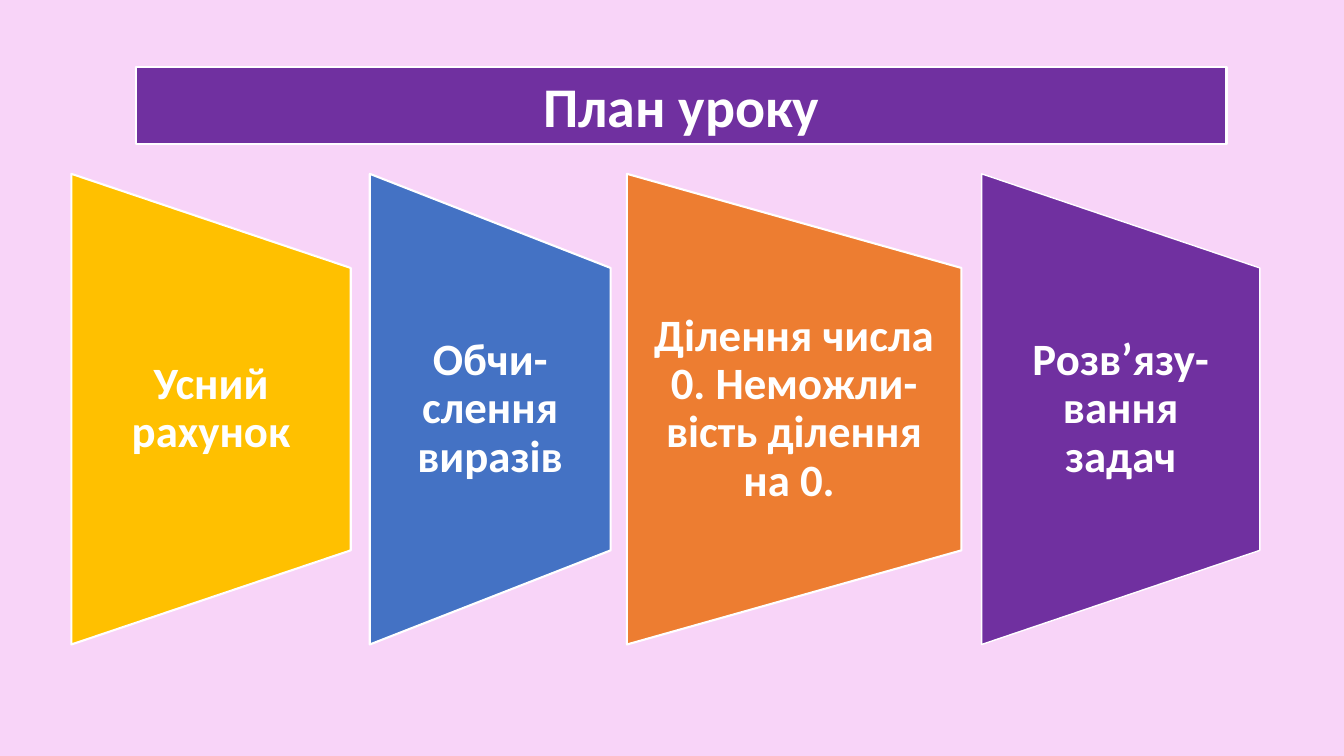
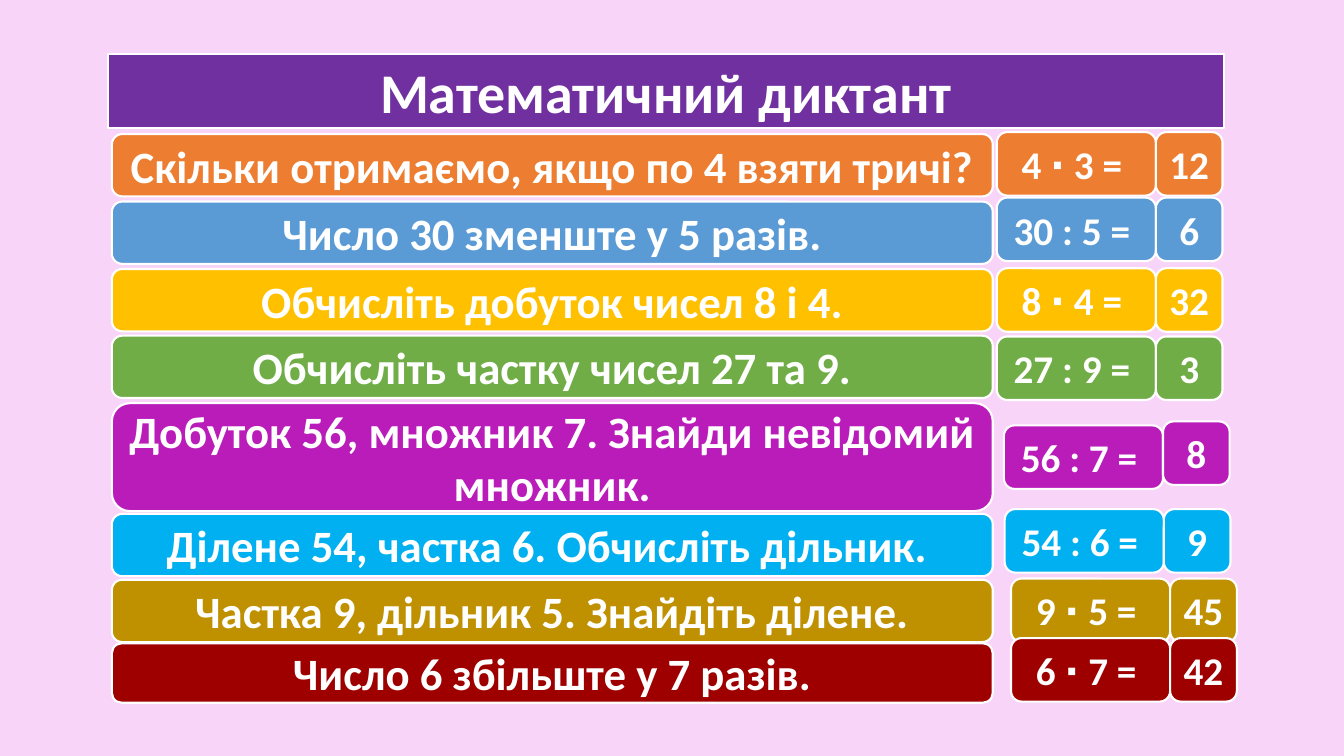
"""Build two lesson slides: the lesson plan and a maths dictation."""
from dataclasses import dataclass
from typing import Optional

import pptx
import pptx.dml.color
import pptx.enum.shapes
import pptx.enum.text
import pptx.shapes.base
import pptx.slide
import pptx.util

Cm = pptx.util.Cm
Pt = pptx.util.Pt
PRESETS = pptx.enum.shapes.MSO_SHAPE

FONT = "Calibri"
WHITE = "FFFFFF"
PINK = "F8D4F8"
PURPLE = "7030A0"
ORANGE = "ED7D31"
YELLOW = "FFC000"

TITLE_SIZE = 40
QUESTION_SIZE = 32
ANSWER_SIZE = 28
TITLE_ONLY_LAYOUT = 5

PANEL_MIDDLE = 10.31
PANEL_HEIGHT = 11.86
PANEL_TEXT_HEIGHT = 7.11
PANEL_INSET = 0.56

QUESTION_LEFT = 2.82
QUESTION_WIDTH = 22.2
EXPRESSION_WIDTH = 4.01
RESULT_WIDTH = 1.68
ANSWER_HEIGHT = 1.6


@dataclass(frozen=True)
class Box:
    """A rectangle in centimetres."""

    left: float
    top: float
    width: float
    height: float


@dataclass(frozen=True)
class Panel:
    """One step of the lesson plan."""

    text: str
    colour: str
    left: float
    width: float
    line_width: float = 1.5


@dataclass(frozen=True)
class Task:
    """One dictation question with its expression and result."""

    question: str
    expression: str
    result: str
    colour: str
    top: float
    answer_left: float
    answer_top: float
    height: float = 1.57
    result_top: Optional[float] = None


PANELS = [
    Panel("Усний рахунок", YELLOW, 1.8, 7.04),
    Panel("Обчи-слення виразів", "4472C4", 9.32, 6.07),
    Panel("Ділення числа 0. Неможли-вість ділення на 0. ", ORANGE, 15.8, 8.43),
    Panel("Розв’язу-вання задач", PURPLE, 24.74, 7.01, 1),
]

TASKS = [
    Task("Скільки отримаємо, якщо по 4 взяти тричі?", "4 ∙ 3 = ", "12",
         ORANGE, 3.38, 25.12, 3.33),
    Task("Число 30 зменште у 5 разів.", "30 : 5 = ", "6",
         "5B9BD5", 5.08, 25.12, 4.98),
    Task("Обчисліть добуток чисел 8 і 4.", "8 ∙ 4 = ", "32",
         YELLOW, 6.78, 25.12, 6.76),
    Task("Обчисліть частку чисел 27 та 9.", "27 : 9 = ", "3",
         "70AD47", 8.46, 25.12, 8.48),
    Task("Добуток 56, множник 7. Знайди невідомий множник.", "56 : 7 = ", "8",
         "BA1CBA", 10.16, 25.3, 10.72, height=2.72, result_top=10.62),
    Task("Ділене 54, частка 6. Обчисліть дільник. ", "54 : 6 = ", "9",
         "00B0F0", 12.95, 25.32, 12.83),
    Task("Частка 9, дільник 5. Знайдіть ділене.", "9 ∙ 5 = ", "45",
         "BF9000", 14.61, 25.48, 14.58),
    Task("Число 6 збільште у 7 разів.", "6 ∙ 7 = ", "42",
         "9E0000", 16.21, 25.48, 16.08, height=1.5),
]


def rgb(colour: str) -> pptx.dml.color.RGBColor:
    """Turn a hex string into a colour."""
    return pptx.dml.color.RGBColor.from_string(colour)


def lengths(box: Box) -> tuple:
    """Give the box as left, top, width and height lengths."""
    return Cm(box.left), Cm(box.top), Cm(box.width), Cm(box.height)


def paint(shape: pptx.shapes.base.BaseShape, colour: str,
          line_width: float = 1.5) -> None:
    """Fill a shape and give it a white outline."""
    shape.fill.solid()
    shape.fill.fore_color.rgb = rgb(colour)
    shape.line.color.rgb = rgb(WHITE)
    shape.line.width = Pt(line_width)


def write(shape: pptx.shapes.base.BaseShape, text: str, size: float) -> None:
    """Set bold white text in the centre of a shape."""
    frame = shape.text_frame
    frame.text = text
    frame.word_wrap = True
    frame.auto_size = pptx.enum.text.MSO_AUTO_SIZE.NONE
    frame.vertical_anchor = pptx.enum.text.MSO_ANCHOR.MIDDLE
    para = frame.paragraphs[0]
    para.alignment = pptx.enum.text.PP_ALIGN.CENTER
    para.font.name = FONT
    para.font.size = Pt(size)
    para.font.bold = True
    para.font.color.rgb = rgb(WHITE)


def add_page(deck: pptx.presentation.Presentation, title: str,
             box: Box) -> pptx.slide.Slide:
    """Add a slide with a purple title band."""
    page = deck.slides.add_slide(deck.slide_layouts[TITLE_ONLY_LAYOUT])
    band = page.shapes.title
    band.left, band.top, band.width, band.height = lengths(box)
    paint(band, PURPLE)
    write(band, title, TITLE_SIZE)
    return page


def add_panel(page: pptx.slide.Slide, panel: Panel) -> None:
    """Draw a sideways trapezoid with upright text over it."""
    outline = Box(panel.left + (panel.width - PANEL_HEIGHT) / 2,
                  PANEL_MIDDLE - panel.width / 2, PANEL_HEIGHT, panel.width)
    trapezoid = page.shapes.add_shape(PRESETS.FLOWCHART_MANUAL_OPERATION,
                                      *lengths(outline))
    trapezoid.rotation = 270
    trapezoid.shadow.inherit = False
    paint(trapezoid, panel.colour, panel.line_width)

    label_box = Box(panel.left, PANEL_MIDDLE - PANEL_TEXT_HEIGHT / 2,
                    panel.width, PANEL_TEXT_HEIGHT)
    label = page.shapes.add_textbox(*lengths(label_box))
    write(label, panel.text, QUESTION_SIZE)
    frame = label.text_frame
    frame.margin_left = frame.margin_right = Cm(PANEL_INSET)
    frame.margin_top = frame.margin_bottom = 0
    frame.paragraphs[0].line_spacing = 0.9


def add_card(page: pptx.slide.Slide, text: str, size: float, colour: str,
             box: Box) -> None:
    """Draw a rounded card with text."""
    card = page.shapes.add_shape(PRESETS.ROUNDED_RECTANGLE, *lengths(box))
    card.shadow.inherit = False
    paint(card, colour)
    write(card, text, size)


def add_task(page: pptx.slide.Slide, task: Task) -> None:
    """Draw the question, expression and result of a task."""
    result_top = task.answer_top if task.result_top is None else task.result_top
    add_card(page, task.question, QUESTION_SIZE, task.colour,
             Box(QUESTION_LEFT, task.top, QUESTION_WIDTH, task.height))
    add_card(page, task.expression, ANSWER_SIZE, task.colour,
             Box(task.answer_left, task.answer_top, EXPRESSION_WIDTH, ANSWER_HEIGHT))
    add_card(page, task.result, ANSWER_SIZE, task.colour,
             Box(task.answer_left + EXPRESSION_WIDTH, result_top,
                 RESULT_WIDTH, ANSWER_HEIGHT))


def main() -> None:
    """Build and save the deck."""
    deck = pptx.Presentation()
    deck.slide_width, deck.slide_height = Cm(33.87), Cm(19.05)
    backdrop = deck.slide_master.background.fill
    backdrop.solid()
    backdrop.fore_color.rgb = rgb(PINK)

    plan = add_page(deck, "План уроку", Box(3.43, 1.68, 27.48, 1.96))
    for panel in PANELS:
        add_panel(plan, panel)

    dictation = add_page(deck, "Математичний диктант",
                         Box(2.72, 1.37, 28.12, 1.85))
    for task in TASKS:
        add_task(dictation, task)

    deck.save("out.pptx")


if __name__ == "__main__":
    main()
